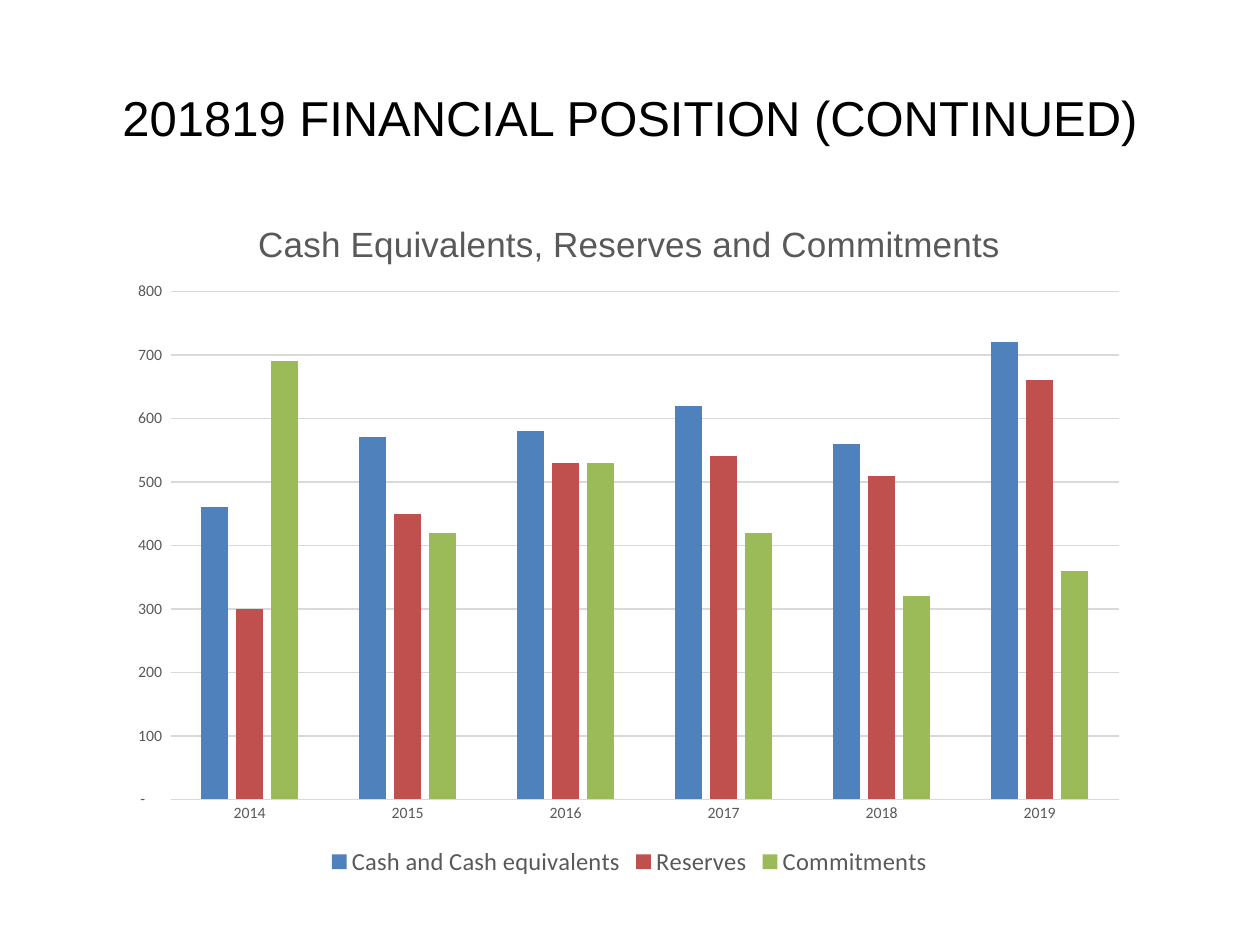
from dataclasses import dataclass

from lxml.etree import SubElement
from pptx import Presentation
from pptx.chart.data import CategoryChartData
from pptx.dml.color import RGBColor
from pptx.enum.chart import XL_CHART_TYPE, XL_LEGEND_POSITION, XL_TICK_MARK
from pptx.enum.text import MSO_ANCHOR, PP_ALIGN
from pptx.oxml.ns import qn
from pptx.util import Inches, Pt

COLORS = {
    "black": "000000",
    "gray": "595959",
    "grid": "D9D9D9",
    "blue": "4F81BD",
    "red": "C0504D",
    "green": "9BBB59",
}
NUMBER_FORMAT = '_ * #,##0_ ;_ * \\-#,##0_ ;_ * "-"??_ ;_ '


@dataclass
class Measure:
    name: str
    values: tuple[int, ...]
    color: str


YEARS = ("2014", "2015", "2016", "2017", "2018", "2019")
MEASURES = (
    Measure("Cash and Cash equivalents", (460, 570, 580, 620, 560, 720), "blue"),
    Measure("Reserves", (300, 450, 530, 540, 510, 660), "red"),
    Measure("Commitments", (690, 420, 530, 420, 320, 360), "green"),
)


def rgb(name: str) -> RGBColor:
    return RGBColor.from_string(COLORS[name])


def format_font(font, *, size: float, color: str, name: str = "Calibri") -> None:
    font.size = Pt(size)
    font.name = name
    font.bold = False
    font.color.rgb = rgb(color)


def write_text(text_frame, text: str, *, size: float, color: str) -> None:
    text_frame.text = text
    paragraph = text_frame.paragraphs[0]
    paragraph.alignment = PP_ALIGN.CENTER
    format_font(paragraph.runs[0].font, size=size, color=color, name="Arial")


def format_line(line) -> None:
    line.color.rgb = rgb("grid")
    line.width = Pt(0.75)


def format_axis(axis) -> None:
    axis.major_tick_mark = XL_TICK_MARK.NONE
    axis.minor_tick_mark = XL_TICK_MARK.NONE
    format_font(axis.tick_labels.font, size=9, color="gray")


def place_plot(chart, **fractions: float) -> None:
    """Fix the inner plot area as fractions of the chart frame."""
    plot_area = chart.element.find(".//" + qn("c:plotArea"))
    layout = plot_area.find(qn("c:layout"))
    if layout is None:
        layout = SubElement(plot_area, qn("c:layout"))
        plot_area.insert(0, layout)
    manual = SubElement(layout, qn("c:manualLayout"))
    settings = {"layoutTarget": "inner", "xMode": "edge", "yMode": "edge", **fractions}
    for tag, value in settings.items():
        SubElement(manual, qn(f"c:{tag}")).set("val", str(value))


def add_position_chart(slide) -> None:
    chart_data = CategoryChartData()
    chart_data.categories = YEARS
    for measure in MEASURES:
        chart_data.add_series(measure.name, measure.values)
    chart = slide.shapes.add_chart(
        XL_CHART_TYPE.COLUMN_CLUSTERED,
        Inches(0.95), Inches(1.55), Inches(8.09), Inches(5.45), chart_data,
    ).chart
    format_font(chart.font, size=10, color="black")

    # Chart title and legend
    chart.has_title = True
    write_text(chart.chart_title.text_frame, "Cash Equivalents, Reserves and Commitments",
               size=20, color="gray")
    chart.chart_title.include_in_layout = False
    chart.has_legend = True
    chart.legend.position = XL_LEGEND_POSITION.BOTTOM
    chart.legend.include_in_layout = False
    format_font(chart.legend.font, size=14, color="gray")

    # Axes
    format_axis(chart.category_axis)
    format_line(chart.category_axis.format.line)
    value_axis = chart.value_axis
    format_axis(value_axis)
    value_axis.minimum_scale, value_axis.maximum_scale, value_axis.major_unit = 0, 800, 100
    value_axis.format.line.fill.background()
    format_line(value_axis.major_gridlines.format.line)
    value_axis.tick_labels.number_format = NUMBER_FORMAT
    value_axis.tick_labels.number_format_is_linked = False

    # Columns
    plot = chart.plots[0]
    plot.gap_width, plot.overlap, plot.vary_by_categories = 219, -27, False
    for series, measure in zip(plot.series, MEASURES):
        series.format.fill.solid()
        series.format.fill.fore_color.rgb = rgb(measure.color)
    place_plot(chart, x=0.05, y=0.14, w=0.93, h=0.74)


def main() -> None:
    presentation = Presentation()
    presentation.slide_width, presentation.slide_height = Inches(10), Inches(7.5)
    slide = presentation.slides.add_slide(presentation.slide_layouts[5])

    # Slide title
    title = slide.shapes.title
    title.left, title.top = Inches(0.5), Inches(0.3)
    title.width, title.height = Inches(9), Inches(1.25)
    title.text_frame.vertical_anchor = MSO_ANCHOR.MIDDLE
    write_text(title.text_frame, "201819 FINANCIAL POSITION (CONTINUED)",
               size=28, color="black")

    add_position_chart(slide)
    presentation.save("out.pptx")


if __name__ == "__main__":
    main()
